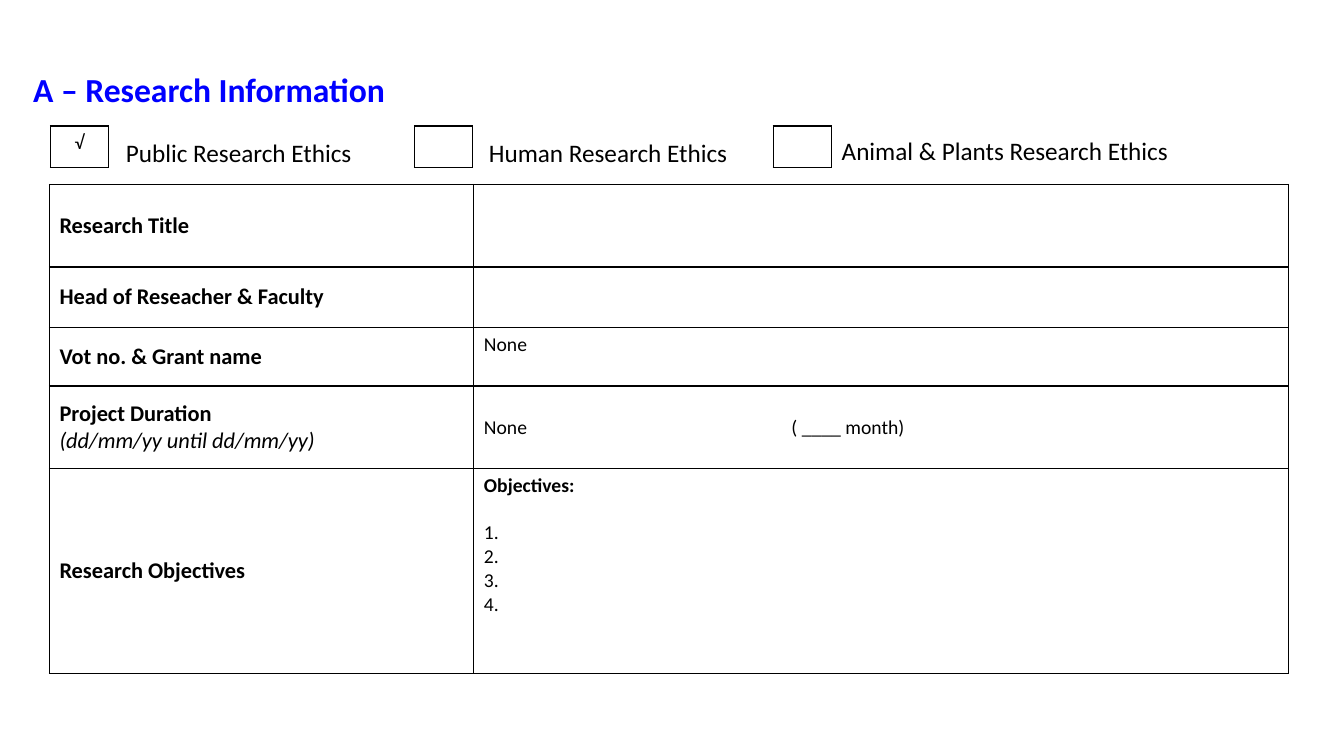
from dataclasses import dataclass

import lxml.etree
import pptx
import pptx.dml.color
import pptx.enum.text
import pptx.oxml.ns
import pptx.util

Inches = pptx.util.Inches
Pt = pptx.util.Pt
PP_ALIGN = pptx.enum.text.PP_ALIGN
ANCHOR = pptx.enum.text.MSO_ANCHOR


@dataclass(frozen=True)
class Theme:
    font: str = "Calibri"
    ink: str = "000000"
    heading: str = "0000FF"
    title_size: int = 24
    option_size: int = 18
    label_size: int = 16
    entry_size: int = 14
    border: float = 1


class FormSlide:
    def __init__(self, prs, theme):
        self.theme = theme
        self.slide = prs.slides.add_slide(prs.slide_layouts[6])

    def add_run(self, p, text, size, color=None, bold=False, italic=False):
        r = p.add_run()
        r.text = text
        r.font.name = self.theme.font
        r.font.size = Pt(size)
        r.font.bold = bold
        r.font.italic = italic
        r.font.color.rgb = pptx.dml.color.RGBColor.from_string(color or self.theme.ink)

    def text(self, left, top, width, height, text, size, wrap=True, **style):
        tf = self.slide.shapes.add_textbox(
            Inches(left), Inches(top), Inches(width), Inches(height)).text_frame
        tf.word_wrap = wrap
        tf.auto_size = pptx.enum.text.MSO_AUTO_SIZE.SHAPE_TO_FIT_TEXT
        self.add_run(tf.paragraphs[0], text, size, **style)

    def table(self, left, top, widths, heights):
        """Add an unfilled table with a border round every cell."""
        frame = self.slide.shapes.add_table(
            len(heights), len(widths), Inches(left), Inches(top),
            Inches(sum(widths)), Inches(sum(heights)))
        table = frame.table
        table.first_row = table.horz_banding = False
        for column, width in zip(table.columns, widths):
            column.width = Inches(width)
        for row, height in zip(table.rows, heights):
            row.height = Inches(height)
        for cell in table.iter_cells():
            self.outline(cell)
            cell.fill.background()
        return table

    def outline(self, cell):
        qn = pptx.oxml.ns.qn
        tc_pr = cell._tc.get_or_add_tcPr()
        for side in ("a:lnL", "a:lnR", "a:lnT", "a:lnB"):
            line = lxml.etree.SubElement(tc_pr, qn(side), w=str(Pt(self.theme.border)))
            fill = lxml.etree.SubElement(line, qn("a:solidFill"))
            lxml.etree.SubElement(fill, qn("a:srgbClr"), val=self.theme.ink)

    def fill_cell(self, cell, lines, size, anchor=ANCHOR.TOP):
        """Write lines, each a pair of text and run style, as paragraphs."""
        cell.vertical_anchor = anchor
        tf = cell.text_frame
        for i, (text, style) in enumerate(lines):
            p = tf.add_paragraph() if i else tf.paragraphs[0]
            self.add_run(p, text, size, **style)
        return tf.paragraphs

    def checkbox(self, left, mark=""):
        cell = self.table(left, 1.25, [0.58], [0.41]).cell(0, 0)
        if mark:
            p = self.fill_cell(cell, [(mark, {})], self.theme.entry_size)[0]
            p.alignment = PP_ALIGN.CENTER


def add_tab_stop(p, position):
    qn = pptx.oxml.ns.qn
    tabs = lxml.etree.SubElement(p._p.get_or_add_pPr(), qn("a:tabLst"))
    lxml.etree.SubElement(tabs, qn("a:tab"), pos=str(Inches(position)), algn="l")


def main():
    prs = pptx.Presentation()
    prs.slide_width, prs.slide_height = Inches(13.33), Inches(7.5)
    theme = Theme()
    s = FormSlide(prs, theme)
    bold, plain, italic = {"bold": True}, {}, {"italic": True}

    details = s.table(0.49, 1.83, [4.21, 8.08], [0.82, 0.6, 0.58, 0.82, 2.03])
    labels = [
        [("Research Title", bold)],
        [("Head of Reseacher & Faculty", bold)],
        [("Vot no. & Grant name", bold)],
        [("Project Duration", bold), ("(dd/mm/yy until dd/mm/yy)", italic)],
        [("Research Objectives", bold)],
    ]
    for row, lines in enumerate(labels):
        s.fill_cell(details.cell(row, 0), lines, theme.label_size, ANCHOR.MIDDLE)

    s.fill_cell(details.cell(2, 1), [("None", plain)], theme.entry_size)
    duration = s.fill_cell(details.cell(3, 1), [("None\t( ____ month)", plain)],
                           theme.entry_size, ANCHOR.MIDDLE)
    add_tab_stop(duration[0], 3.05)
    numbers = [(f"{n}.", plain) for n in range(1, 5)]
    objectives = s.fill_cell(details.cell(4, 1), [("Objectives:", bold)] + numbers,
                             theme.entry_size)
    objectives[1].space_before = Pt(17)

    s.text(0.23, 0.63, 6.83, 0.51, "A – Research Information",
           theme.title_size, color=theme.heading, bold=True)

    options = [
        (0.5, "√", 1.15, 1.31, 2.46, "Public Research Ethics"),
        (4.11, "", 4.75, 1.31, 2.59, "Human Research Ethics"),
        (7.67, "", 8.25, 1.29, 3.47, "Animal & Plants Research Ethics"),
    ]
    for box_left, mark, left, top, width, name in options:
        s.checkbox(box_left, mark)
        s.text(left, top, width, 0.4, name, theme.option_size, wrap=False)

    prs.save("out.pptx")


if __name__ == "__main__":
    main()
